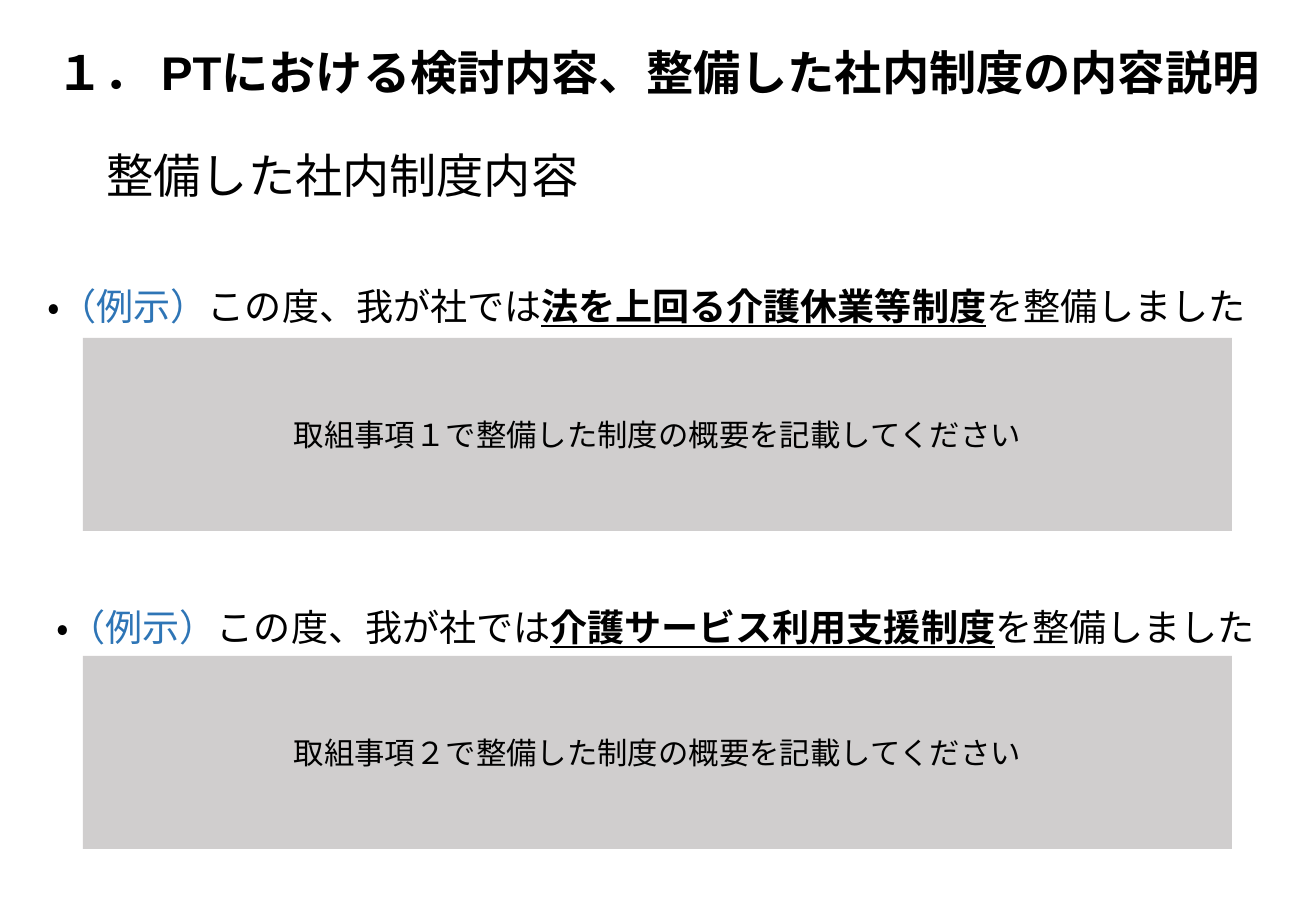
"""Build the slide that explains the newly introduced in-house care support systems."""
from pptx import Presentation
from pptx.dml.color import RGBColor
from pptx.enum.lang import MSO_LANGUAGE_ID
from pptx.enum.shapes import MSO_SHAPE
from pptx.enum.text import MSO_ANCHOR, MSO_AUTO_SIZE, PP_ALIGN
from pptx.util import Pt
from lxml.etree import SubElement
from pptx.oxml.ns import qn

PX = 7526
BLACK, BLUE, GREY = "000000", "2E75B6", "D0CECE"


def color(hex_string):
    return RGBColor.from_string(hex_string)


def write(shape, box, runs, size, font="Calibri", bold=False, before=0,
          align=PP_ALIGN.LEFT, anchor=MSO_ANCHOR.TOP, spacing=0.9):
    shape.left, shape.top, shape.width, shape.height = [v * PX for v in box]
    frame = shape.text_frame
    frame.word_wrap = True
    frame.auto_size = MSO_AUTO_SIZE.NONE
    frame.vertical_anchor = anchor
    paragraph = frame.paragraphs[0]
    paragraph.alignment = align
    paragraph.line_spacing = spacing
    paragraph.space_before = Pt(before)
    paragraph.font.size = Pt(size)
    paragraph.font.name = font
    paragraph.font.bold = bold
    for text, hex_string, emphasis in runs:
        run = paragraph.add_run()
        run.text = text
        run.font.language_id = MSO_LANGUAGE_ID.JAPANESE
        run.font.color.rgb = color(hex_string)
        if emphasis:
            run.font.bold = run.font.underline = True
    return paragraph


deck = Presentation()
deck.slide_width, deck.slide_height = 1316 * PX, 911 * PX
slide = deck.slides.add_slide(deck.slide_layouts[3])
heading, *examples = slide.placeholders

write(heading, (44, 43, 1248, 64),
      [("１． PTにおける検討内容、整備した社内制度の内容説明", BLACK, False)],
      28, font="Arial", bold=True, anchor=MSO_ANCHOR.MIDDLE)

subtitle = slide.shapes.add_textbox(0, 0, 0, 0)
write(subtitle, (84, 147, 513, 64), [(" 整備した社内制度内容", BLACK, False)], 28, before=10)

systems = [
    (35, 282, "法を上回る介護休業等制度", "取組事項１で整備した制度の概要を記載してください"),
    (44, 603, "介護サービス利用支援制度", "取組事項２で整備した制度の概要を記載してください"),
]
for row, (example, (left, top, system, prompt)) in enumerate(zip(examples, systems)):
    sentence = write(example, (left, top, 1299, 52), [
        ("・", BLACK, False),
        ("（例示）", BLUE, False),
        ("この度、我が社では", BLACK, False),
        (system, BLACK, True),
        ("を整備しました", BLACK, False),
    ], 22, before=10)
    properties = sentence._p.get_or_add_pPr()
    properties.set("marL", "0")
    properties.set("indent", "0")
    no_bullet = SubElement(properties, qn("a:buNone"))
    properties.find(qn("a:defRPr")).addprevious(no_bullet)

    summary = slide.shapes.add_shape(MSO_SHAPE.RECTANGLE, 0, 0, 0, 0)
    summary.shadow.inherit = False
    summary.fill.solid()
    summary.fill.fore_color.rgb = color(GREY)
    summary.line.fill.background()
    write(summary, (83, 338 + 318 * row, 1149, 193), [(prompt, BLACK, False)], 18,
          align=PP_ALIGN.CENTER, anchor=MSO_ANCHOR.MIDDLE, spacing=1.0)

deck.save("out.pptx")
